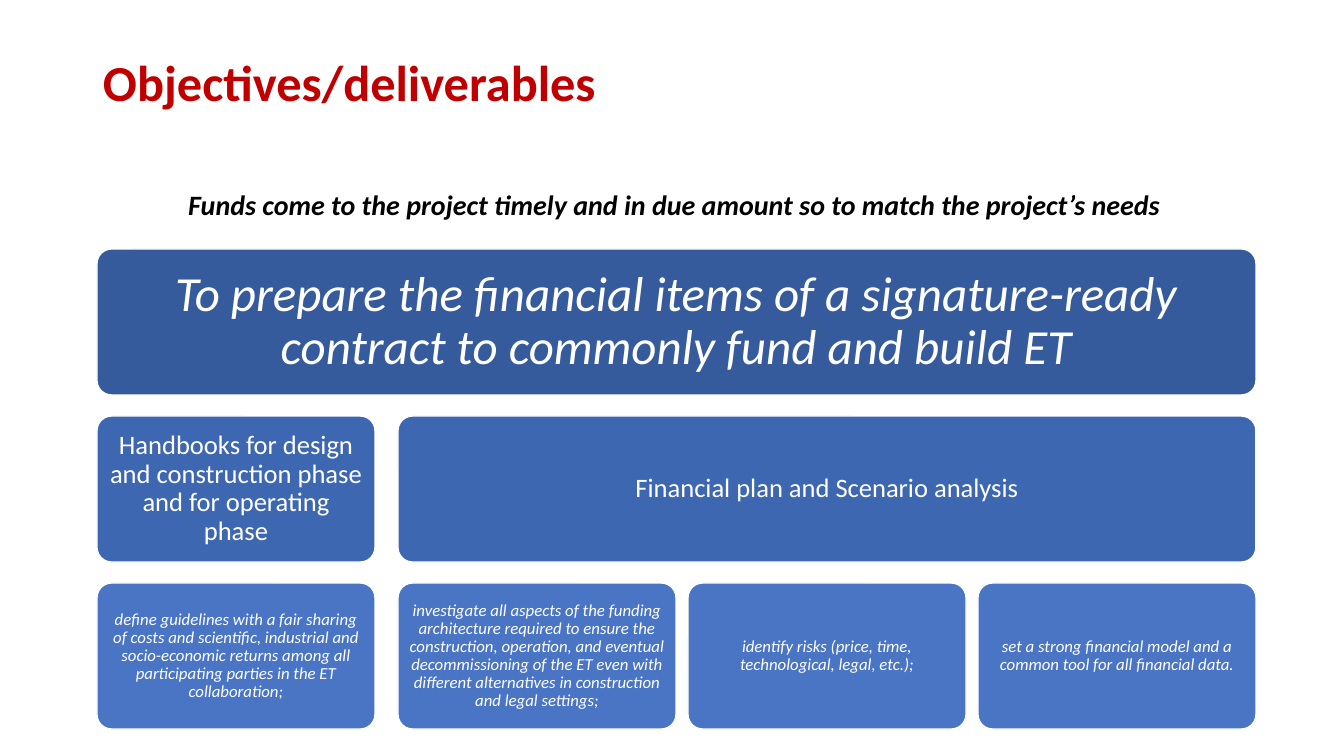
from pptx import Presentation
from pptx.dml.color import RGBColor
from pptx.enum.shapes import MSO_SHAPE as Shape
from pptx.enum.text import MSO_ANCHOR as Anchor, PP_ALIGN as Align
from pptx.util import Pt

PX = 914400 / 100.8
RED = RGBColor(0xC0, 0x00, 0x00)
BLACK = RGBColor(0x00, 0x00, 0x00)
WHITE = RGBColor(0xFF, 0xFF, 0xFF)
GOAL_BLUE = RGBColor(0x36, 0x5B, 0x9D)
OUTPUT_BLUE = RGBColor(0x3E, 0x67, 0xB2)
TASK_BLUE = RGBColor(0x4A, 0x75, 0xC5)


def px(length):
    return round(length * PX)


def write(frame, text, size, color=WHITE, bold=False, italic=False,
          align=Align.CENTER, anchor=Anchor.MIDDLE, spacing=0.9, insets=(10, 5, 10, 5)):
    frame.word_wrap = True
    frame.vertical_anchor = anchor
    frame.margin_left, frame.margin_top, frame.margin_right, frame.margin_bottom = map(px, insets)
    paragraph = frame.paragraphs[0]
    paragraph.alignment = align
    paragraph.line_spacing = spacing
    run = paragraph.add_run()
    run.text = text
    font = run.font
    font.name, font.size, font.bold, font.italic = "Calibri", Pt(size), bold, italic
    font.color.rgb = color


deck = Presentation()
deck.slide_width, deck.slide_height = px(1344), px(756)
slide = deck.slides.add_slide(deck.slide_layouts[5])

title = slide.shapes.title
title.left, title.top, title.width, title.height = px(93), px(40), px(1159), px(146)
write(title.text_frame, "Objectives/deliverables", 36, RED, bold=True,
      align=Align.LEFT, insets=(10, 5, 10, 60))

LEFT, CARD, CARD_HEIGHT = 97, 278, 146
PLAN_LEFT, COLUMN_STEP = 398, 290
ROW_TOP, ROW_STEP = 249, 167
PLAN_WIDTH = 2 * COLUMN_STEP + CARD
FULL_WIDTH = PLAN_LEFT + PLAN_WIDTH - LEFT

goal = [(LEFT, FULL_WIDTH, "To prepare the financial items of a signature-ready contract to commonly fund and build ET")]
outputs = [
    (LEFT, CARD, "Handbooks for design and construction phase and for operating phase"),
    (PLAN_LEFT, PLAN_WIDTH, "Financial plan and Scenario analysis"),
]
tasks = [(LEFT, CARD, "define guidelines with a fair sharing of costs and scientific, industrial and "
          "socio-economic returns among all participating parties in the ET collaboration;")]
plan_tasks = [
    "investigate all aspects of the funding architecture required to ensure the construction, "
    "operation, and eventual decommissioning of the ET even with different alternatives in "
    "construction and legal settings;",
    "identify risks (price, time, technological, legal, etc.);",
    "set a strong financial model and a common tool for all financial data.",
]
for column, task in enumerate(plan_tasks):
    tasks.append((PLAN_LEFT + column * COLUMN_STEP, CARD, task))

levels = [
    (goal, GOAL_BLUE, 35, True, 15),
    (outputs, OUTPUT_BLUE, 19, False, 8),
    (tasks, TASK_BLUE, 12, True, 5),
]
for row, (cards, blue, size, italic, inset) in enumerate(levels):
    for left, width, text in cards:
        card = slide.shapes.add_shape(Shape.ROUNDED_RECTANGLE, px(left), px(ROW_TOP + row * ROW_STEP),
                                      px(width), px(CARD_HEIGHT))
        card.adjustments[0] = 0.1
        card.shadow.inherit = False
        card.fill.solid()
        card.fill.fore_color.rgb = blue
        card.line.color.rgb = WHITE
        card.line.width = Pt(1)
        write(card.text_frame, text, size, italic=italic, insets=(inset,) * 4)

motto = slide.shapes.add_textbox(px(97), px(182), px(1155), px(78))
write(motto.text_frame, "Funds come to the project timely and in due amount so to match the project’s needs",
      20, BLACK, bold=True, italic=True, anchor=Anchor.TOP, spacing=1.0)

deck.save("out.pptx")
